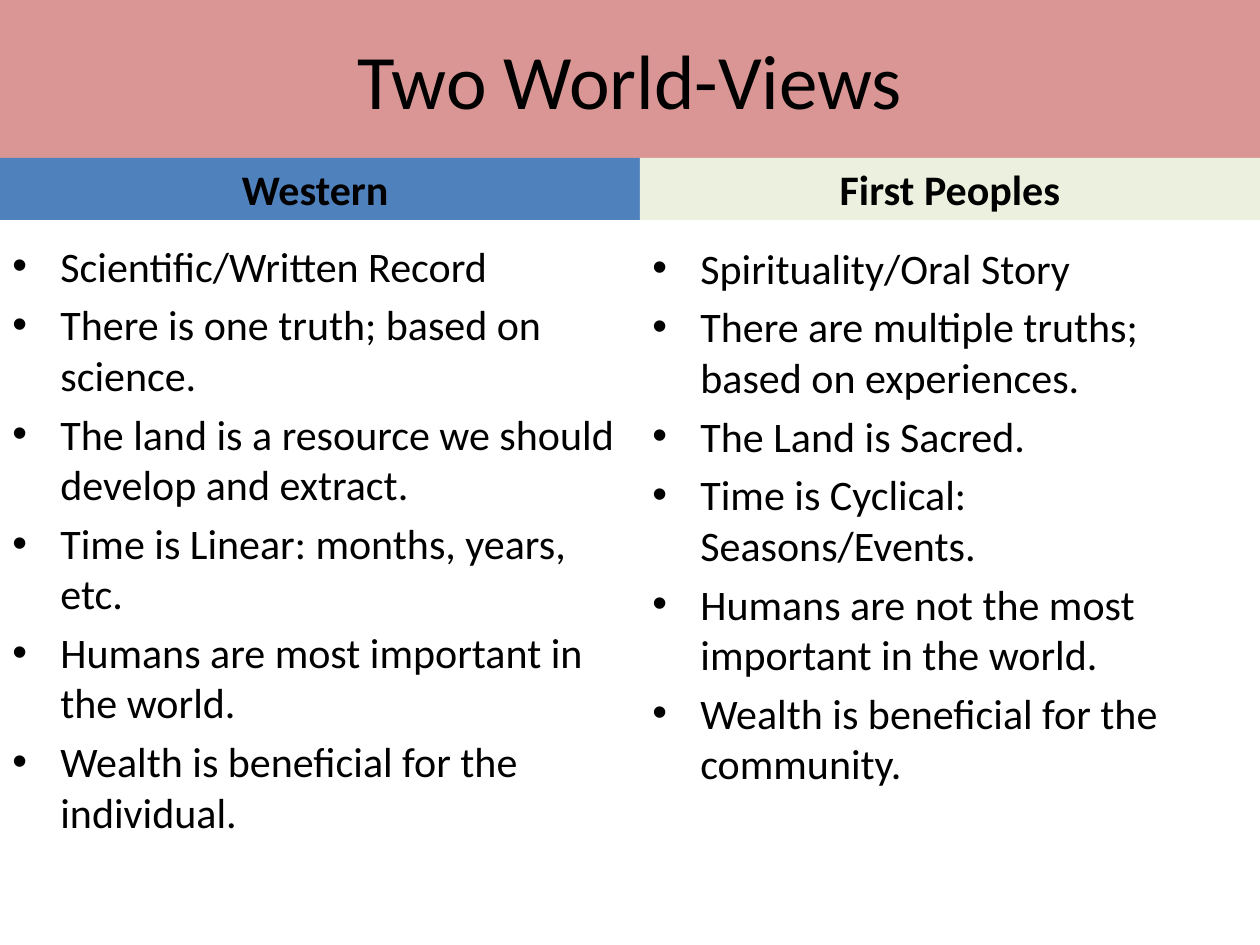
import dataclasses

import lxml.etree
import pptx
import pptx.dml.color
import pptx.enum.shapes
import pptx.enum.text
import pptx.oxml.ns
import pptx.util

RGB = pptx.dml.color.RGBColor
ROSE = RGB(0xD9, 0x96, 0x94)
BLUE = RGB(0x4F, 0x81, 0xBD)
CREAM = RGB(0xEB, 0xF1, 0xDE)
BLACK = RGB(0, 0, 0)

WIDTH, HEIGHT = 1260, 945
BAND = 158
HEAD = 62
SPLIT = 640
INDENT = 48
FONT = "Calibri"
GAP = pptx.util.Pt(4.8)
ALIGN = pptx.enum.text.PP_ALIGN
ANCHOR = pptx.enum.text.MSO_ANCHOR


@dataclasses.dataclass(frozen=True)
class View:
    name: str
    left: int
    right: int
    top: int
    fill: RGB
    points: tuple[str, ...]


VIEWS = (
    View("Western ", 0, SPLIT, 234, BLUE, (
        "Scientific/Written Record",
        "There is one truth; based on science.",
        "The land is a resource we should develop and extract.",
        "Time is Linear: months, years, etc.",
        "Humans are most important in the world.",
        "Wealth is beneficial for the individual.",
    )),
    View("First Peoples", SPLIT, WIDTH, 236, CREAM, (
        "Spirituality/Oral Story",
        "There are multiple truths; based on experiences.",
        "The Land is Sacred.",
        "Time is Cyclical: Seasons/Events.",
        "Humans are not the most important in the world.",
        "Wealth is beneficial for the community.",
    )),
)


def px(count: int) -> pptx.util.Emu:
    return pptx.util.Emu(round(count * 914400 / 126))


def place(shape, left: int, top: int, width: int, height: int) -> None:
    shape.left, shape.top = px(left), px(top)
    shape.width, shape.height = px(width), px(height)


def paint(shape, fill: RGB) -> None:
    shape.fill.solid()
    shape.fill.fore_color.rgb = fill


def style(para, size: int, bold: bool = False) -> None:
    para.font.name = FONT
    para.font.size = pptx.util.Pt(size)
    para.font.bold = bold
    para.font.color.rgb = BLACK


def add_title(slide, text: str) -> None:
    title = slide.shapes.title
    place(title, 0, 0, WIDTH, BAND)
    paint(title, ROSE)
    frame = title.text_frame
    frame.text = text
    frame.auto_size = pptx.enum.text.MSO_AUTO_SIZE.NONE
    frame.vertical_anchor = ANCHOR.MIDDLE
    frame.paragraphs[0].alignment = ALIGN.CENTER
    style(frame.paragraphs[0], 44)


def add_head(slide, view: View) -> None:
    kind = pptx.enum.shapes.MSO_SHAPE.RECTANGLE
    head = slide.shapes.add_shape(kind, 0, 0, 0, 0)
    place(head, view.left, BAND, view.right - view.left, HEAD)
    head.shadow.inherit = False
    paint(head, view.fill)
    head.line.fill.background()
    frame = head.text_frame
    frame.text = view.name
    frame.word_wrap = True
    frame.vertical_anchor = ANCHOR.BOTTOM
    para = frame.paragraphs[0]
    para.alignment = ALIGN.CENTER
    para.space_before = GAP
    style(para, 24, True)


def add_bullet(para) -> None:
    props = para._p.get_or_add_pPr()
    props.set("marL", str(px(INDENT)))
    props.set("indent", str(-px(INDENT)))
    qn = pptx.oxml.ns.qn
    font = lxml.etree.Element(qn("a:buFont"), typeface="Arial")
    mark = lxml.etree.Element(qn("a:buChar"), char="•")
    props.find(qn("a:spcBef")).addnext(font)
    font.addnext(mark)


def add_points(slide, view: View) -> None:
    box = slide.shapes.add_textbox(0, 0, 0, 0)
    place(box, view.left, view.top, view.right - view.left, HEIGHT - view.top)
    frame = box.text_frame
    frame.text = "\n".join(view.points)
    frame.word_wrap = True
    for para in frame.paragraphs:
        para.space_before = GAP
        style(para, 24)
        add_bullet(para)


def main() -> None:
    """Build the slide that sets the two world-views side by side."""
    deck = pptx.Presentation()
    deck.slide_width, deck.slide_height = px(WIDTH), px(HEIGHT)
    slide = deck.slides.add_slide(deck.slide_layouts[5])
    add_title(slide, "Two World-Views")
    for view in VIEWS:
        add_head(slide, view)
        add_points(slide, view)
    deck.save("out.pptx")


if __name__ == "__main__":
    main()
